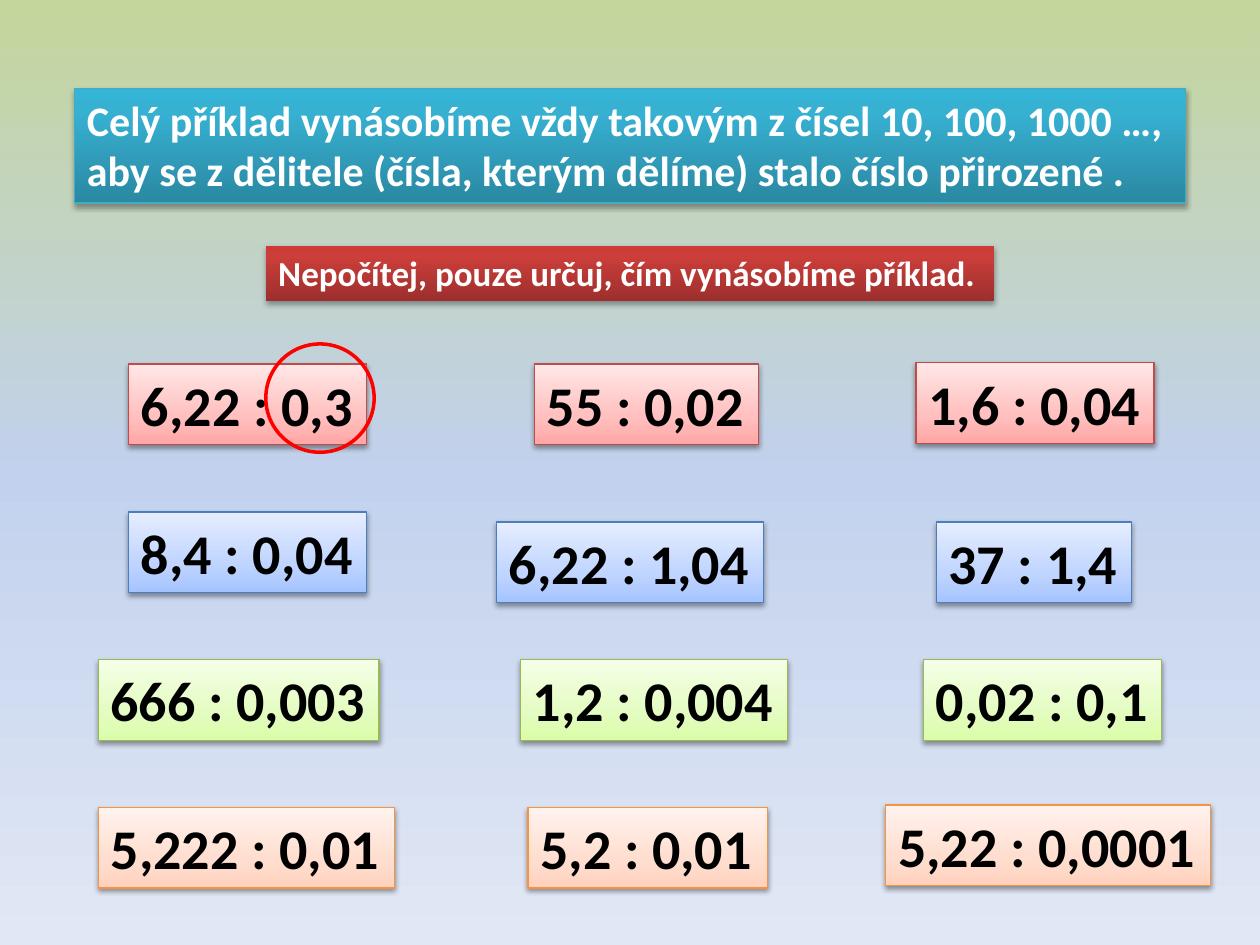
from dataclasses import dataclass

from lxml.etree import SubElement
from pptx import Presentation
from pptx.dml.color import RGBColor as Rgb
from pptx.enum.shapes import MSO_SHAPE as Preset
from pptx.enum.text import MSO_ANCHOR as Anchor, MSO_AUTO_SIZE as AutoSize, PP_ALIGN as Align
from pptx.oxml.ns import qn
from pptx.util import Inches, Pt


@dataclass(frozen=True)
class Look:
    """Gradient stops from bottom to top, outline colour and shadow strength."""
    stops: tuple
    line: str | None
    alpha: int = 38
    distance: float = 1.6


def pale(bottom, middle, top, line):
    """Return the light look shared by the exercise cards."""
    return Look(((0, bottom), (35, middle), (100, top)), line)


def strong(bottom, middle, top, line=None):
    """Return the saturated look shared by the two banners."""
    return Look(((0, bottom), (80, middle), (100, top)), line, 35, 1.8)


@dataclass(frozen=True)
class Theme:
    """Colours, font and type sizes of the deck."""
    font: str = "Calibri"
    title_size: int = 24
    task_size: int = 20
    card_size: int = 32
    light: str = "FFFFFF"
    dark: str = "000000"
    ring: str = "FF0000"
    backdrop: tuple = ((0, "C3D69B"), (50, "C2D1ED"), (100, "E1E8F5"))
    teal: Look = strong("2A88A2", "37B1D2", "34B4D6", "46AAC5")
    crimson: Look = strong("9C2F2D", "CB3E3A", "CE3B37")
    red: Look = pale("FFA6A5", "FFC0BF", "FFE7E7", "BF4C48")
    blue: Look = pale("A4C4FF", "BFD4FF", "E6EEFF", "4B7EBC")
    green: Look = pale("DAFDA7", "E4FCC2", "F5FFE7", "98B955")
    orange: Look = pale("FFD2BD", "FFDED0", "FFF2ED", "F69240")


class Board:
    """Draws on one slide using a grid of 100 columns by 75 rows."""

    def __init__(self, deck, theme):
        self.theme = theme
        self.column = deck.slide_width / 100
        self.row = deck.slide_height / 75
        self.slide = deck.slides.add_slide(deck.slide_layouts[5])
        self.gradient(self.slide.background.fill, self.slide.element, theme.backdrop, 270)

    def area(self, left, top, width, height):
        """Convert grid cells to slide lengths."""
        return [round(cells * unit) for cells, unit in zip(
            (left, top, width, height), (self.column, self.row) * 2)]

    def gradient(self, fill, element, stops, angle):
        """Fill with a linear gradient of any number of stops."""
        fill.gradient()
        fill.gradient_angle = angle
        stop_list = element.xpath(".//a:gsLst")[0]
        stop_list[:] = []
        for percent, color in stops:
            stop = SubElement(stop_list, qn("a:gs"), pos=str(percent * 1000))
            SubElement(stop, qn("a:srgbClr"), val=color)

    def shadow(self, box, look):
        """Cast a soft shadow straight down."""
        box.shadow.inherit = False
        effects = box.element.spPr.find(qn("a:effectLst"))
        cast = SubElement(effects, qn("a:outerShdw"), blurRad=str(Pt(3.1)),
                          dist=str(Pt(look.distance)), dir="5400000", rotWithShape="0")
        color = SubElement(cast, qn("a:srgbClr"), val=self.theme.dark)
        SubElement(color, qn("a:alpha"), val=str(look.alpha * 1000))

    def outline(self, box, color, width):
        """Set the line of a box, or remove it."""
        if color is None:
            box.line.fill.background()
            return
        box.line.color.rgb = Rgb.from_string(color)
        box.line.width = Pt(width)

    def label(self, box, lines, size, color):
        """Set bold left-aligned lines, one paragraph each."""
        frame = box.text_frame
        frame.word_wrap = False
        frame.auto_size = AutoSize.SHAPE_TO_FIT_TEXT
        frame.vertical_anchor = Anchor.TOP
        for index, line in enumerate(lines):
            para = frame.add_paragraph() if index else frame.paragraphs[0]
            para.alignment = Align.LEFT
            span = para.add_run()
            span.text = line
            span.font.name = self.theme.font
            span.font.size = Pt(size)
            span.font.bold = True
            span.font.color.rgb = Rgb.from_string(color)

    def dress(self, box, look, lines, size, color):
        """Give a box its look and its text."""
        self.gradient(box.fill, box.element, look.stops, 90)
        self.outline(box, look.line, 0.75)
        self.shadow(box, look)
        self.label(box, lines, size, color)

    def title(self, place, lines):
        """Format the title placeholder as the top banner."""
        box = self.slide.shapes.title
        box.left, box.top, box.width, box.height = self.area(*place)
        self.dress(box, self.theme.teal, lines, self.theme.title_size, self.theme.light)

    def panel(self, place, look, text, size, color):
        """Add a filled rectangle with one line of text."""
        box = self.slide.shapes.add_shape(Preset.RECTANGLE, *self.area(*place))
        self.dress(box, look, [text], size, color)

    def ring(self, place):
        """Add an empty circle as a highlight."""
        circle = self.slide.shapes.add_shape(Preset.OVAL, *self.area(*place))
        circle.fill.background()
        circle.shadow.inherit = False
        self.outline(circle, self.theme.ring, 2)


def main():
    """Build and save the division exercise slide."""
    theme = Theme()
    deck = Presentation()
    deck.slide_width, deck.slide_height = Inches(10), Inches(7.5)
    board = Board(deck, theme)
    board.title((5.9, 7, 88.2, 9.1), [
        "Celý příklad vynásobíme vždy takovým z čísel 10, 100, 1000 …,",
        "aby se z dělitele (čísla, kterým dělíme) stalo číslo přirozené .",
    ])
    board.panel((21.1, 19.5, 57.8, 4.4), theme.crimson,
                "Nepočítej, pouze určuj, čím vynásobíme příklad.",
                theme.task_size, theme.light)

    first_row, row_step, card_height = 28.9, 11.73, 6.4
    exercises = (
        (theme.red, (("6,22 : 0,3", 10.2, 18.9, 0), ("55 : 0,02", 42.4, 17.8, 0),
                     ("1,6 : 0,04", 72.7, 18.9, -0.1))),
        (theme.blue, (("8,4 : 0,04", 10.2, 18.9, 0), ("6,22 : 1,04", 39.4, 21.2, 0.8),
                      ("37 : 1,4", 74.3, 15.5, 0.8))),
        (theme.green, (("666 : 0,003", 7.8, 22.3, 0), ("1,2 : 0,004", 41.3, 21.2, 0),
                       ("0,02 : 0,1", 73.3, 18.9, 0))),
        (theme.orange, (("5,222 : 0,01", 7.8, 23.5, 0), ("5,2 : 0,01", 41.9, 19, 0),
                        ("5,22 : 0,0001", 70.3, 25.8, -0.2))),
    )
    for index, (look, cards) in enumerate(exercises):
        for text, left, width, shift in cards:
            top = first_row + index * row_step + shift
            board.panel((left, top, width, card_height), look, text,
                        theme.card_size, theme.dark)
    board.ring((21.1, 27.3, 8.6, 8.6))
    deck.save("out.pptx")


if __name__ == "__main__":
    main()
